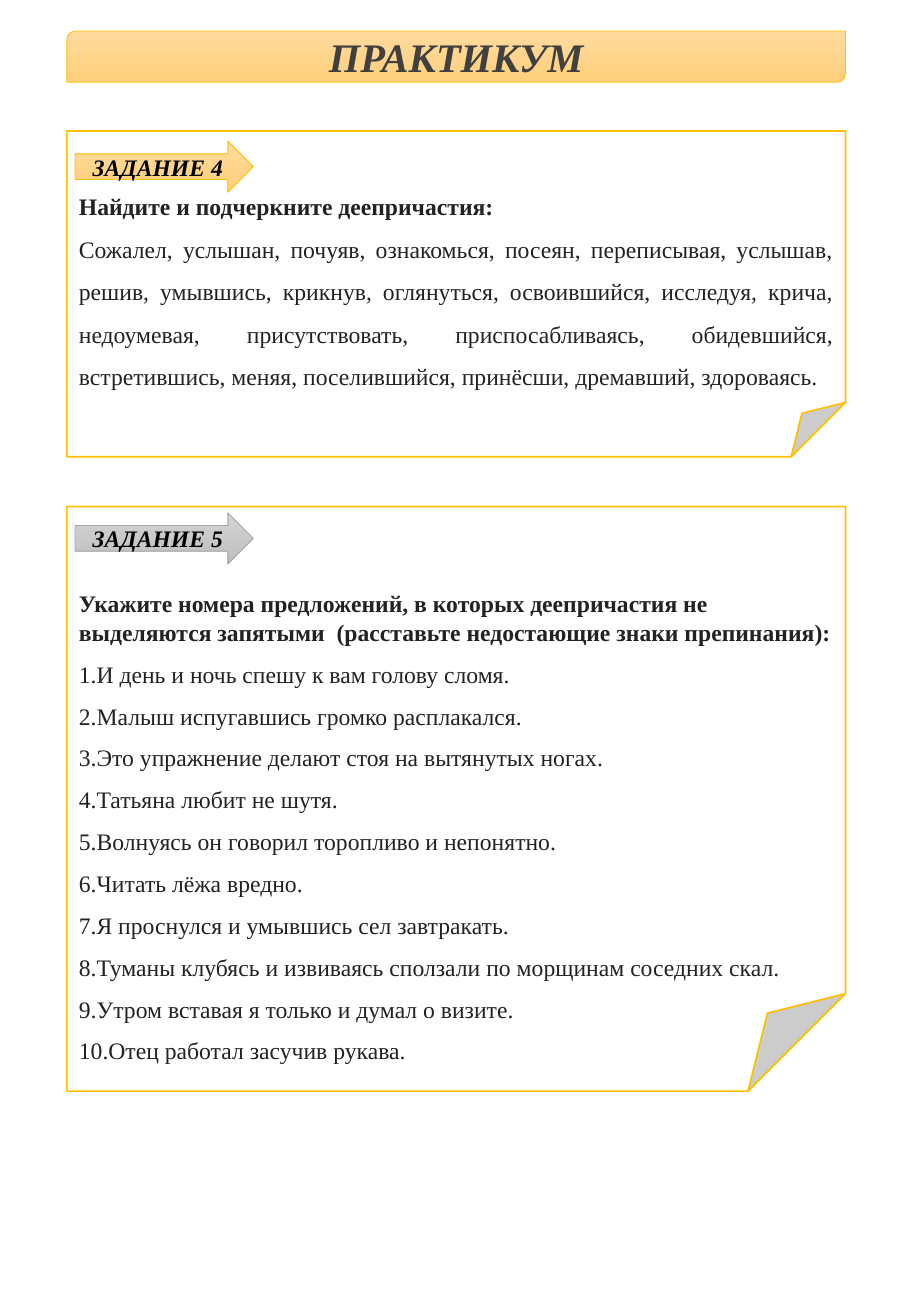
from pptx import Presentation
from pptx.dml.color import RGBColor
from pptx.enum.shapes import MSO_SHAPE
from pptx.enum.text import MSO_ANCHOR, PP_ALIGN
from pptx.util import Cm, Pt

COLORS = {
    "gold": "FFC000", "gold_top": "FFDB9E", "gold_bottom": "FFD07C",
    "gray": "A5A5A5", "gray_top": "D2D2D2", "gray_bottom": "C0C0C0",
    "paper": "FFFFFF", "title": "404040", "label": "000000", "body": "222222",
}


def add_block(kind, left, top, width, height, fills, outline, weight):
    block = slide.shapes.add_shape(kind, Cm(left), Cm(top), Cm(width), Cm(height))
    block.shadow.inherit = False
    if len(fills) == 1:
        block.fill.solid()
        block.fill.fore_color.rgb = RGBColor.from_string(COLORS[fills[0]])
    else:
        block.fill.gradient()
        block.fill.gradient_angle = 270
        for stop, fill in zip(block.fill.gradient_stops, fills):
            stop.color.rgb = RGBColor.from_string(COLORS[fill])
    block.line.color.rgb = RGBColor.from_string(COLORS[outline])
    block.line.width = Pt(weight)
    block.text_frame.word_wrap = True
    return block.text_frame


def add_text(paragraph, text, size, color, align, bold=True, italic=False):
    paragraph.alignment = align
    run = paragraph.add_run()
    run.text = text
    run.font.name = "Times New Roman"
    run.font.size = Pt(size)
    run.font.bold = bold
    run.font.italic = italic
    run.font.color.rgb = RGBColor.from_string(COLORS[color])


tasks = [
    {
        "label": "ЗАДАНИЕ 4", "theme": "gold",
        "top": 2.74, "height": 6.81, "label_top": 2.95, "text_inset": 1.28,
        "line_spacing": 1.5, "space_after": 0,
        "heading": "Найдите и подчеркните деепричастия:",
        "lines": [
            "Сожалел, услышан, почуяв, ознакомься, посеян, переписывая, услышав, "
            "решив, умывшись, крикнув, оглянуться, освоившийся, исследуя, крича, "
            "недоумевая, присутствовать, приспосабливаясь, обидевшийся, "
            "встретившись, меняя, поселившийся, принёсши, дремавший, здороваясь.",
        ],
    },
    {
        "label": "ЗАДАНИЕ 5", "theme": "gray",
        "top": 10.59, "height": 12.22, "label_top": 10.72, "text_inset": 1.73,
        "line_spacing": 1.0, "space_after": 8,
        "heading": "Укажите номера предложений, в которых деепричастия не "
                   "выделяются запятыми  (расставьте недостающие знаки препинания):",
        "lines": [
            "1.И день и ночь спешу к вам голову сломя.",
            "2.Малыш испугавшись громко расплакался.",
            "3.Это упражнение делают стоя на вытянутых ногах.",
            "4.Татьяна любит не шутя.",
            "5.Волнуясь он говорил торопливо и непонятно.",
            "6.Читать лёжа вредно.",
            "7.Я проснулся и умывшись сел завтракать.",
            "8.Туманы клубясь и извиваясь сползали по морщинам соседних скал.",
            "9.Утром вставая я только и думал о визите.",
            "10.Отец работал засучив рукава.",
        ],
    },
]

presentation = Presentation()
presentation.slide_width = Cm(19.05)
presentation.slide_height = Cm(27.51)
slide = presentation.slides.add_slide(presentation.slide_layouts[6])

title = add_block(MSO_SHAPE.ROUND_2_DIAG_RECTANGLE, 1.4, 0.65, 16.28, 1.07,
                  ["gold_top", "gold_bottom"], "gold", 0.5)
add_text(title.paragraphs[0], "ПРАКТИКУМ", 24, "title", PP_ALIGN.CENTER, italic=True)

for task in tasks:
    card = add_block(MSO_SHAPE.FOLDED_CORNER, 1.4, task["top"], 16.28, task["height"],
                     ["paper"], "gold", 1)
    card.vertical_anchor = MSO_ANCHOR.TOP
    card.margin_top = Cm(task["text_inset"])
    heading = card.paragraphs[0]
    heading.space_after = Pt(task["space_after"])
    add_text(heading, task["heading"], 14, "body", PP_ALIGN.LEFT)
    for line in task["lines"]:
        sentence = card.add_paragraph()
        sentence.line_spacing = task["line_spacing"]
        sentence.space_after = Pt(task["space_after"])
        add_text(sentence, line, 14, "body", PP_ALIGN.JUSTIFY, bold=False)

    theme = task["theme"]
    label = add_block(MSO_SHAPE.RIGHT_ARROW, 1.57, task["label_top"], 3.73, 1.07,
                      [f"{theme}_top", f"{theme}_bottom"], theme, 0.5)
    add_text(label.paragraphs[0], task["label"], 14, "label", PP_ALIGN.CENTER, italic=True)

presentation.save("out.pptx")
